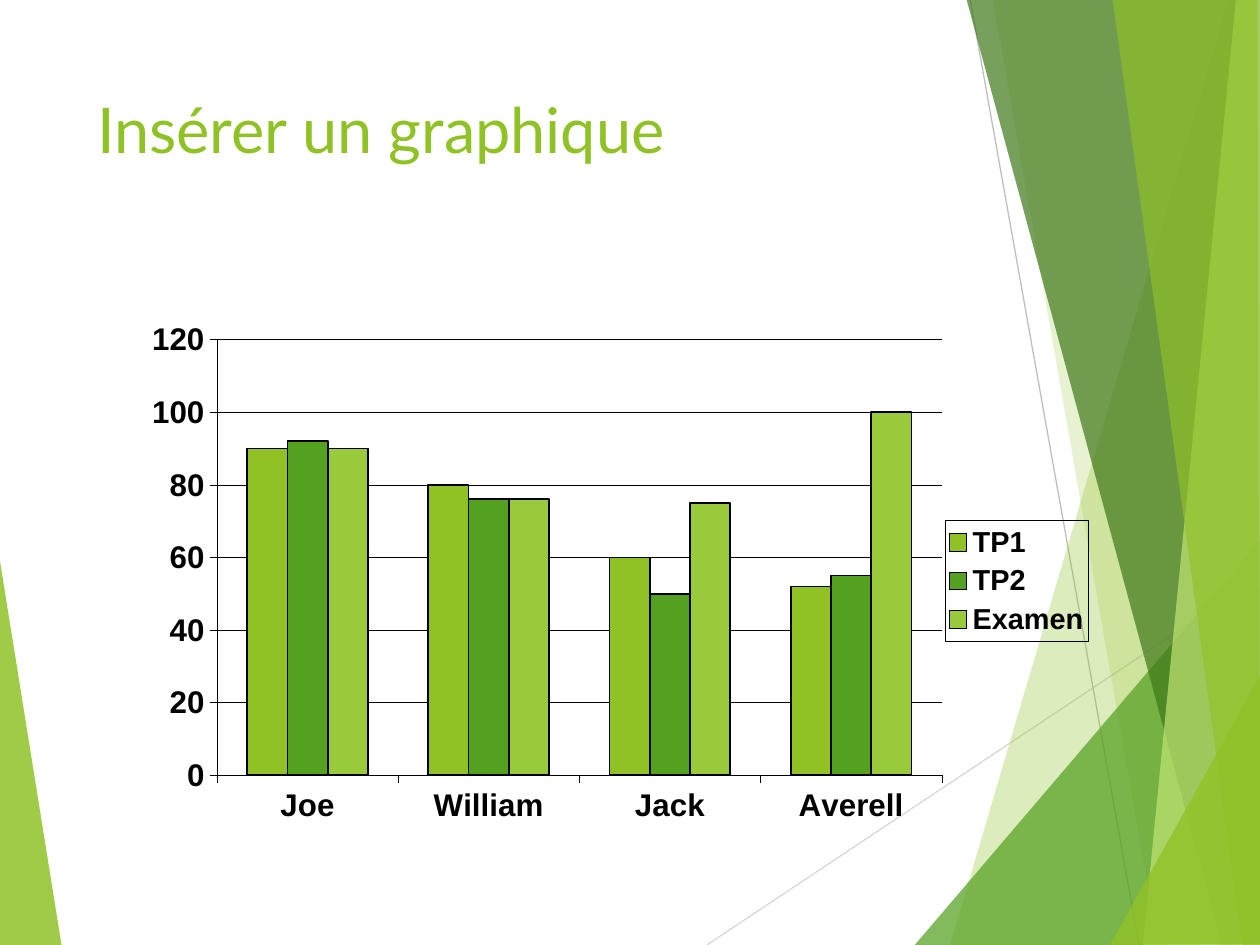
from dataclasses import dataclass

from lxml.etree import SubElement
from pptx import Presentation
from pptx.chart.data import CategoryChartData
from pptx.dml.color import RGBColor
from pptx.enum.chart import XL_CHART_TYPE, XL_LEGEND_POSITION, XL_TICK_MARK
from pptx.enum.shapes import MSO_CONNECTOR
from pptx.enum.text import MSO_ANCHOR, PP_ALIGN
from pptx.oxml import parse_xml
from pptx.oxml.ns import nsdecls, qn
from pptx.util import Inches, Pt


@dataclass(frozen=True)
class Theme:
    lime: str = "90C226"
    green: str = "54A021"
    dark_green: str = "3F7819"
    pale_green: str = "C0E474"
    light_green: str = "99CA3C"
    grey: str = "BFBFBF"
    light_grey: str = "D9D9D9"
    black: str = "000000"
    title_font: str = "Lato"
    chart_font: str = "Arial"
    title_size: float = 36
    axis_size: float = 17.9
    legend_size: float = 16.5


THEME = Theme()

# Corner points in inches, colour, opacity in percent
LEFT_FACET = ([(-0.01, 4.39), (0.49, 7.51), (-0.01, 7.5)], THEME.lime, 85)
RIGHT_FACETS = [
    ([(9.75, 0), (7.54, 7.5), (10.02, 7.51), (10.01, 0.01)], THEME.lime, 30),
    ([(7.88, -0.01), (9.19, 7.5), (10.01, 7.5), (10.01, -0.01)], THEME.lime, 20),
    ([(7.26, 7.5), (10, 4.29), (10.01, 7.5)], THEME.green, 72),
    ([(7.67, -0.01), (9.7, 7.5), (10.01, 7.49), (10.01, -0.01)], THEME.dark_green, 70),
    ([(9.81, -0.01), (9.07, 7.5), (10.01, 7.5), (10, -0.01)], THEME.pale_green, 70),
    ([(8.83, -0.01), (9.86, 7.5), (10, 7.5), (9.98, -0.01)], THEME.lime, 65),
    ([(8.81, 7.5), (10.01, 5.35), (10.01, 7.49)], THEME.lime, 80),
]
RAYS = [
    ((5.61, 7.5), (10.01, 4.57), THEME.light_grey),
    ((7.7, 0), (9.04, 7.5), THEME.grey),
]

STUDENTS = ["Joe", "William", "Jack", "Averell"]
GRADES = [
    ("TP1", [90, 80, 60, 52], THEME.lime),
    ("TP2", [92, 76, 50, 55], THEME.green),
    ("Examen", [90, 76, 75, 100], THEME.light_green),
]


def rgb(color):
    return RGBColor.from_string(color)


def style_font(font, size, name, color=THEME.black, bold=False):
    font.size, font.name, font.bold = Pt(size), name, bold
    font.color.rgb = rgb(color)


def style_line(line, width, color=THEME.black):
    line.width = Pt(width)
    line.color.rgb = rgb(color)


def put_text(tf, text, align=PP_ALIGN.LEFT, anchor=MSO_ANCHOR.TOP, **font):
    tf.word_wrap = True
    tf.vertical_anchor = anchor
    p = tf.paragraphs[0]
    p.alignment = align
    r = p.add_run()
    r.text = text
    style_font(r.font, **font)


def add_title(slide, text):
    sp = slide.shapes.title
    sp.left, sp.top = Inches(0.67), Inches(0.67)
    sp.width, sp.height = Inches(6.94), Inches(1.44)
    put_text(sp.text_frame, text, size=THEME.title_size,
             name=THEME.title_font, color=THEME.lime)


def add_facet(slide, points, color, opacity):
    start, *rest = [(Inches(x), Inches(y)) for x, y in points]
    builder = slide.shapes.build_freeform(*start)
    builder.add_line_segments(rest, close=True)
    sp = builder.convert_to_shape()
    sp.shadow.inherit = False
    sp.line.fill.background()
    sp.fill.solid()
    sp.fill.fore_color.rgb = rgb(color)
    clr = sp._element.spPr.find(qn("a:solidFill")).find(qn("a:srgbClr"))
    SubElement(clr, qn("a:alpha"), val=str(opacity * 1000))


def add_ray(slide, start, end, color):
    ends = [Inches(v) for v in (*start, *end)]
    cxn = slide.shapes.add_connector(MSO_CONNECTOR.STRAIGHT, *ends)
    style_line(cxn.line, 0.75, color)
    SubElement(cxn._element.spPr, qn("a:effectLst"))


def manual_layout(x, y, w, h, inner=False):
    """Chart layout element, in fractions of the chart area."""
    target = '<c:layoutTarget val="inner"/>' if inner else ""
    modes = '<c:xMode val="edge"/><c:yMode val="edge"/>'
    box = "".join(f'<c:{k} val="{v}"/>' for k, v in zip("xywh", (x, y, w, h)))
    return parse_xml(f'<c:layout {nsdecls("c")}><c:manualLayout>{target}{modes}{box}'
                     '</c:manualLayout></c:layout>')


def style_axis(axis):
    axis.major_tick_mark = XL_TICK_MARK.OUTSIDE
    axis.minor_tick_mark = XL_TICK_MARK.NONE
    style_font(axis.tick_labels.font, THEME.axis_size, THEME.chart_font, bold=True)
    style_line(axis.format.line, 0.25)


def style_legend(chart):
    chart.has_legend = True
    legend = chart.legend
    legend.position = XL_LEGEND_POSITION.RIGHT
    legend.include_in_layout = False
    style_font(legend.font, THEME.legend_size, THEME.chart_font, bold=True)
    element = legend._element
    for old in element.findall(qn("c:layout")):
        element.remove(old)
    element.find(qn("c:legendPos")).addnext(manual_layout(0.84, 0.39, 0.15, 0.23))
    element.find(qn("c:overlay")).addnext(parse_xml(
        f'<c:spPr {nsdecls("c", "a")}><a:noFill/><a:ln w="{Pt(0.25)}"><a:solidFill>'
        f'<a:srgbClr val="{THEME.black}"/></a:solidFill></a:ln></c:spPr>'))


def add_grades_chart(slide):
    data = CategoryChartData()
    data.categories = STUDENTS
    for name, values, _ in GRADES:
        data.add_series(name, values)
    chart = slide.shapes.add_chart(
        XL_CHART_TYPE.COLUMN_CLUSTERED, Inches(1.17), Inches(2.5),
        Inches(7.56), Inches(4.18), data).chart
    chart.has_title = False
    style_font(chart.font, THEME.axis_size, THEME.chart_font, bold=True)

    style_axis(chart.category_axis)
    axis = chart.value_axis
    style_axis(axis)
    axis.minimum_scale, axis.maximum_scale, axis.major_unit = 0, 120, 20
    axis.has_major_gridlines = True
    style_line(axis.major_gridlines.format.line, 0.25)

    plot = chart.plots[0]
    plot.gap_width, plot.overlap = 150, 0
    plot.vary_by_categories = False
    for series, (_, _, color) in zip(plot.series, GRADES):
        series.format.fill.solid()
        series.format.fill.fore_color.rgb = rgb(color)
        style_line(series.format.line, 1)

    style_legend(chart)
    area = chart._chartSpace.chart.plotArea
    for old in area.findall(qn("c:layout")):
        area.remove(old)
    area.insert(0, manual_layout(0.073, 0.047, 0.761, 0.827, inner=True))


def main():
    prs = Presentation()
    prs.slide_width, prs.slide_height = Inches(10), Inches(7.5)
    slide = prs.slides.add_slide(prs.slide_layouts[5])
    add_facet(slide, *LEFT_FACET)
    for ray in RAYS:
        add_ray(slide, *ray)
    for facet in RIGHT_FACETS:
        add_facet(slide, *facet)
    add_title(slide, "Insérer un graphique")
    add_grades_chart(slide)
    prs.save("out.pptx")


if __name__ == "__main__":
    main()
